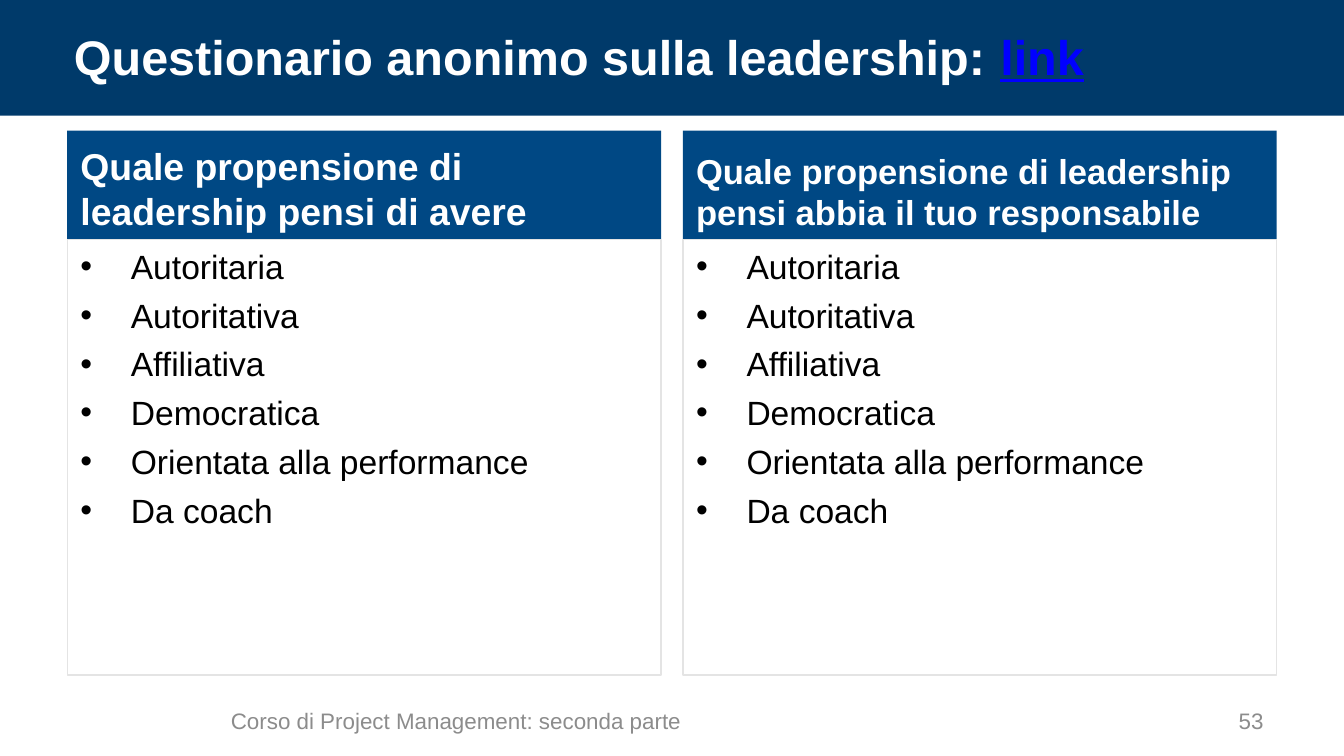
from dataclasses import dataclass

from lxml.etree import SubElement
from pptx import Presentation
from pptx.dml.color import RGBColor
from pptx.enum.shapes import MSO_SHAPE
from pptx.enum.text import MSO_ANCHOR, MSO_AUTO_SIZE, PP_ALIGN
from pptx.oxml.ns import qn
from pptx.util import Pt


@dataclass(frozen=True)
class Theme:
    """Colours, font and type sizes of the slide."""

    font: str = "Arial"
    band: RGBColor = RGBColor(0x00, 0x3A, 0x6A)
    heading: RGBColor = RGBColor(0x00, 0x48, 0x84)
    border: RGBColor = RGBColor(0xE4, 0xE4, 0xE4)
    white: RGBColor = RGBColor(0xFF, 0xFF, 0xFF)
    black: RGBColor = RGBColor(0x00, 0x00, 0x00)
    link: RGBColor = RGBColor(0x00, 0x00, 0xFF)
    grey: RGBColor = RGBColor(0x8C, 0x8C, 0x8C)
    title_size: float = 26
    item_size: float = 18
    footer_size: float = 12


THEME = Theme()
STYLES = ["Autoritaria", "Autoritativa", "Affiliativa", "Democratica",
          "Orientata alla performance", "Da coach"]
QUESTIONS = [("Quale propensione di leadership pensi di avere", 20),
             ("Quale propensione di leadership pensi abbia il tuo responsabile", 18.5)]


def style_paragraph(paragraph, size, color, bold=False, align=PP_ALIGN.LEFT):
    """Set the alignment and font of a paragraph."""
    paragraph.alignment = align
    font = paragraph.font
    font.name, font.size, font.bold = THEME.font, Pt(size), bold
    font.color.rgb = color


def add_panel(slide, left, top, width, height, fill=None, line=None):
    """Add a flat rectangle with an optional fill and border."""
    panel = slide.shapes.add_shape(
        MSO_SHAPE.RECTANGLE, Pt(left), Pt(top), Pt(width), Pt(height))
    panel.shadow.inherit = False
    if fill is None:
        panel.fill.background()
    else:
        panel.fill.solid()
        panel.fill.fore_color.rgb = fill
    if line is None:
        panel.line.fill.background()
    else:
        panel.line.color.rgb = line
        panel.line.width = Pt(0.75)
    return panel


def add_bullet(paragraph, indent):
    """Give a paragraph a round bullet with a hanging indent."""
    properties = paragraph._p.get_or_add_pPr()
    properties.set("marL", str(Pt(indent)))
    properties.set("indent", str(-Pt(indent)))
    SubElement(properties, qn("a:buFont"), typeface=THEME.font)
    SubElement(properties, qn("a:buChar"), char="•")


def add_title_band(slide, left, top, width, height):
    """Place the title over a full-width band."""
    title = slide.shapes.title
    band = add_panel(slide, left, top, width, height, THEME.band)
    title.element.addprevious(band.element)
    title.left, title.top = Pt(left + 32.4), Pt(top + 10.8)
    title.width, title.height = Pt(width - 72), Pt(31.7)
    frame = title.text_frame
    frame.auto_size = MSO_AUTO_SIZE.NONE
    frame.vertical_anchor = MSO_ANCHOR.TOP
    paragraph = frame.paragraphs[0]
    paragraph.add_run().text = "Questionario anonimo sulla leadership: "
    link = paragraph.add_run()
    link.text = "link"
    link.font.underline = True
    link.font.color.rgb = THEME.link
    style_paragraph(paragraph, THEME.title_size, THEME.white, bold=True)


def add_question(slide, left, top, width, height, question, size):
    """Stack a question heading on a bordered list of leadership styles."""
    heading_height = 58.2
    heading = add_panel(slide, left, top, width, heading_height, THEME.heading)
    heading.text_frame.vertical_anchor = MSO_ANCHOR.BOTTOM
    heading.text_frame.text = question
    style_paragraph(heading.text_frame.paragraphs[0], size, THEME.white, bold=True)

    answers = add_panel(slide, left, top + heading_height, width,
                        height - heading_height, line=THEME.border)
    frame = answers.text_frame
    frame.vertical_anchor = MSO_ANCHOR.TOP
    frame.text = "\n".join(STYLES)
    for index, paragraph in enumerate(frame.paragraphs):
        if index:
            paragraph.space_before = Pt(4.5)
        add_bullet(paragraph, 27)
        style_paragraph(paragraph, THEME.item_size, THEME.black)


def add_footer(slide, left, top, width, height):
    """Place the course name and the page number on one line."""
    number_width = 43.2
    course_width = width - number_width - 4.3
    parts = [("Corso di Project Management: seconda parte", left,
              course_width, PP_ALIGN.LEFT),
             ("53", left + width - number_width, number_width, PP_ALIGN.RIGHT)]
    for text, part_left, part_width, align in parts:
        box = slide.shapes.add_textbox(
            Pt(part_left), Pt(top), Pt(part_width), Pt(height))
        frame = box.text_frame
        frame.word_wrap = True
        frame.vertical_anchor = MSO_ANCHOR.MIDDLE
        frame.text = text
        style_paragraph(frame.paragraphs[0], THEME.footer_size, THEME.grey, align=align)


def main():
    """Build the questionnaire slide and save it."""
    presentation = Presentation()
    presentation.slide_width, presentation.slide_height = Pt(720), Pt(405)
    slide = presentation.slides.add_slide(presentation.slide_layouts[5])
    add_title_band(slide, 0, 0, 720, 62)
    margin, gap = 36, 11.6
    column_width = (720 - 2 * margin - gap) / 2
    for column, (question, size) in enumerate(QUESTIONS):
        left = margin + column * (column_width + gap)
        add_question(slide, left, 70, column_width, 291.6, question, size)
    add_footer(slide, 116.6, 375.3, 567.4, 21.6)
    presentation.save("out.pptx")


if __name__ == "__main__":
    main()
